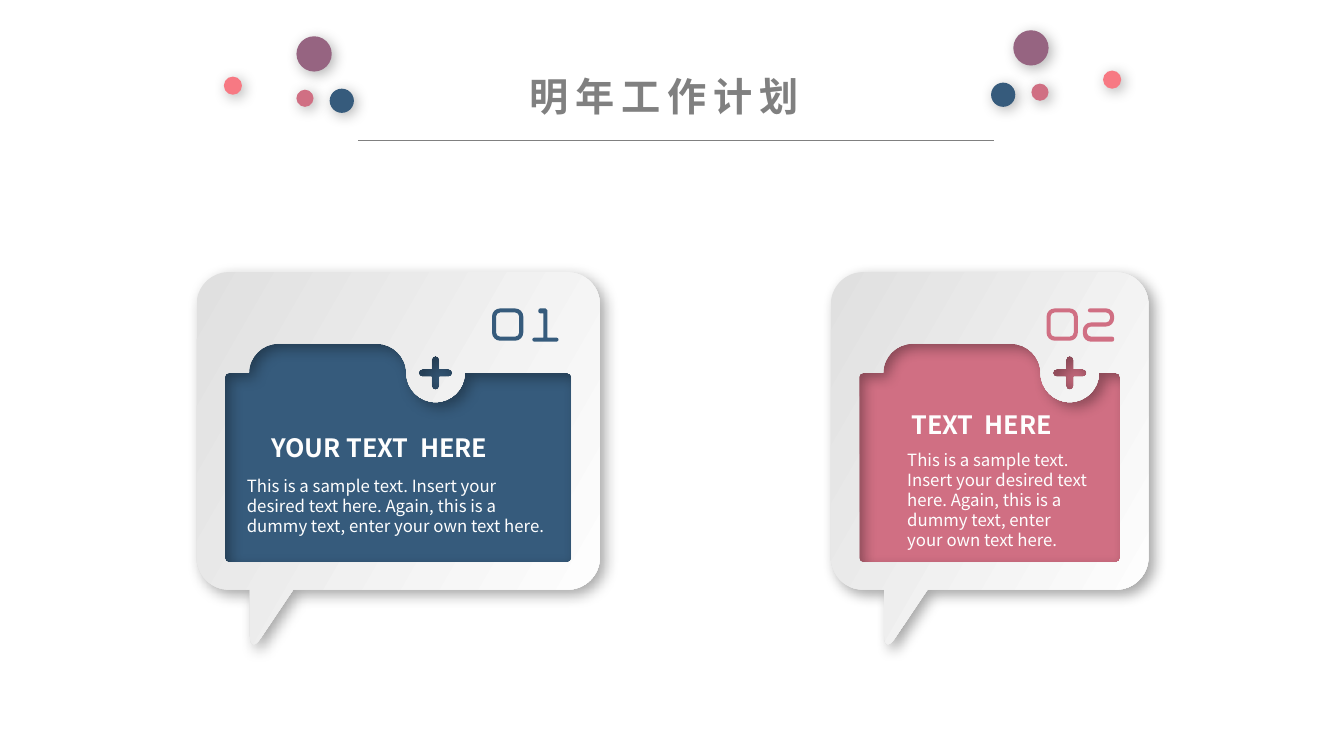
from lxml.etree import SubElement
from pptx import Presentation
from pptx.dml.color import RGBColor
from pptx.enum.shapes import MSO_CONNECTOR, MSO_SHAPE
from pptx.enum.text import MSO_ANCHOR, MSO_AUTO_SIZE, PP_ALIGN
from pptx.oxml.ns import qn
from pptx.util import Inches, Pt

# The slide is a grid of square cells, one inch a side.
CELL = Inches(1)
COLUMNS, ROWS = 13.33, 7.5
FONT = "Noto Sans CJK SC"
COLORS = {
    "blue": "365B7C", "rose": "D06F83", "plum": "966481", "coral": "F77983",
    "gray": "808080", "text": "FEFEFE", "card_dark": "E0E0E0",
    "card_light": "FFFFFF", "shadow": "000000",
}
SAMPLE = ("This is a sample text. Insert your desired text here. "
          "Again, this is a dummy text, enter your own text here.")

CARD_TOP, CARD_BOTTOM = 2.7, 5.85
WINDOW_TOP, WINDOW_BOTTOM = 3.7, 5.58
WINDOW_INSET = 0.28
TAB_RADIUS = 0.29
PLUS_OFFSET = 2.37
DIGIT_TOP = 3.06
CURVE = 0.55  # how far a control point lies from the curve's end to the corner

# Mirrored dots: left, top on the right-hand side, diameter, colour
DOTS = [
    (10.23, 0.83, 0.17, "rose"), (10.05, 0.3, 0.35, "plum"),
    (9.83, 0.82, 0.24, "blue"), (10.94, 0.7, 0.18, "coral"),
]
DOT_MIRROR, DOT_DROP = 13.34, 0.06

CARDS = [
    dict(left=1.95, width=4.0, color="blue", panel=(2.18, 3.62),
         digits=[("0", 4.88), ("1", 5.28)],
         heading=("YOUR TEXT  HERE", 2.59, 4.29, 2.81, 0.42),
         body=(SAMPLE, 2.35, 4.72, 3.27, 0.64)),
    dict(left=8.24, width=3.15, color="rose", panel=(8.35, 2.88),
         digits=[("0", 10.38), ("2", 10.74)],
         heading=("TEXT  HERE", 8.94, 4.06, 1.9, 0.42),
         body=(SAMPLE, 8.9, 4.46, 2.0, 1.32)),
]


def cells(*counts):
    return [round(count * CELL) for count in counts]


def rgb(name):
    return RGBColor.from_string(COLORS[name])


def box_corners(left, top, right, bottom, radius):
    return [(left, top, radius), (right, top, radius),
            (right, bottom, radius), (left, bottom, radius)]


def plus_corners(x, y, arm=0.17, half=0.04):
    signs = [(-1, -1), (1, -1), (1, 1), (-1, 1)]
    corners = []
    for index, (sx, sy) in enumerate(signs):
        tips = [(sx * arm, sy * half, half), (sx * half, sy * half, 0),
                (sx * half, sy * arm, half)]
        corners += tips if index % 2 == 0 else tips[::-1]
    return [(x + dx, y + dy, radius) for dx, dy, radius in corners]


DIGITS = {
    "0": [box_corners(0, 0, 0.31, 0.32, 0.08),
          box_corners(0.04, 0.04, 0.27, 0.28, 0.04)],
    "1": [[(0, 0.29, 0.02), (0.11, 0.29, 0), (0.11, 0.05, 0), (0.06, 0.05, 0.02),
           (0.06, 0, 0.02), (0.15, 0, 0.02), (0.15, 0.29, 0), (0.26, 0.29, 0.02),
           (0.26, 0.33, 0.02), (0, 0.33, 0.02)]],
    "2": [[(0.05, 0, 0.02), (0.31, 0, 0.08), (0.31, 0.18, 0.08), (0.04, 0.18, 0.04),
           (0.04, 0.28, 0.04), (0.31, 0.28, 0.02), (0.31, 0.33, 0.02),
           (0, 0.33, 0.08), (0, 0.14, 0.08), (0.27, 0.14, 0.04),
           (0.27, 0.04, 0.04), (0.05, 0.04, 0.02)]],
}


def corner_points(corners, index):
    """Return a sharp corner's point, or a round one's start, controls and end."""
    x, y, radius = corners[index]
    if not radius:
        return [(x, y)]
    ends, controls = [], []
    for near_x, near_y, _ in (corners[index - 1], corners[(index + 1) % len(corners)]):
        share = radius / ((near_x - x) ** 2 + (near_y - y) ** 2) ** 0.5
        dx, dy = (near_x - x) * share, (near_y - y) * share
        ends.append((x + dx, y + dy))
        controls.append((x + dx * (1 - CURVE), y + dy * (1 - CURVE)))
    return [ends[0], *controls, ends[1]]


def add_outline(shapes, contours):
    """Draw closed contours of (x, y, radius) corners as one freeform."""
    builder, curve_starts, line_count = None, [], 0
    for corners in contours:
        points = []
        for index in range(len(corners)):
            new_points = corner_points(corners, index)
            if len(new_points) > 1:
                curve_starts.append(line_count + len(points))
            points += [cells(*point) for point in new_points]
        if builder is None:
            builder = shapes.build_freeform(*points[0], scale=1.0)
        else:
            builder.move_to(*points[0])
        builder.add_line_segments(points[1:], close=True)
        line_count += len(points) - 1
    shape = builder.convert_to_shape()
    lines = list(shape._element.iter(qn("a:lnTo")))
    for start in curve_starts:
        first, *others = lines[start:start + 3]
        first.tag = qn("a:cubicBezTo")
        for line in others:
            first.append(line[0])
            line.getparent().remove(line)
    return shape


def paint(shape, color):
    shape.shadow.inherit = False
    shape.line.fill.background()
    shape.fill.solid()
    shape.fill.fore_color.rgb = rgb(color)


def add_shadow(shape, opacity, distance, blur=10, angle=45):
    effects = shape._element.spPr.find(qn("a:effectLst"))
    shadow = SubElement(effects, qn("a:outerShdw"), blurRad=str(Pt(blur)),
                        dist=str(Pt(distance)), dir=str(angle * 60000),
                        algn="tl", rotWithShape="0")
    color = SubElement(shadow, qn("a:srgbClr"), val=COLORS["shadow"])
    SubElement(color, qn("a:alpha"), val=str(opacity * 1000))


def write_text(shape, text, *, size, color, bold=False, spacing=None,
               wrap=True, margin_y=0):
    frame = shape.text_frame
    frame.word_wrap = wrap
    frame.auto_size = MSO_AUTO_SIZE.NONE if wrap else MSO_AUTO_SIZE.SHAPE_TO_FIT_TEXT
    frame.vertical_anchor = MSO_ANCHOR.TOP
    frame.margin_left = frame.margin_right = Inches(0.1)
    frame.margin_top = frame.margin_bottom = Inches(margin_y)
    paragraph = frame.paragraphs[0]
    paragraph.alignment = PP_ALIGN.LEFT
    run = paragraph.add_run()
    run.text = text
    run.font.name, run.font.size, run.font.bold = FONT, Pt(size), bold
    run.font.color.rgb = rgb(color)
    properties = run._r.get_or_add_rPr()
    if spacing:
        properties.set("spc", str(spacing * 100))
    latin = properties.find(qn("a:latin"))
    latin.addnext(latin.makeelement(qn("a:ea"), typeface=FONT))


def add_title(slide):
    title = slide.shapes.title
    title.left, title.top, title.width, title.height = cells(5.15, 0.67, 2.98, 0.57)
    write_text(title, "明年工作计划", size=28, color="gray", bold=True,
               spacing=5, wrap=False, margin_y=0.05)
    rule = slide.shapes.add_connector(MSO_CONNECTOR.STRAIGHT, *cells(3.55, 1.39, 9.86, 1.39))
    rule.line.color.rgb = rgb("gray")
    rule.line.width = Pt(0.5)
    SubElement(rule._element.spPr, qn("a:effectLst"))


def add_dot(slide, left, top, diameter, color):
    dot = slide.shapes.add_shape(MSO_SHAPE.OVAL, *cells(left, top, diameter, diameter))
    paint(dot, color)
    add_shadow(dot, opacity=30, distance=3)


def add_frame(shapes, left, right):
    """Draw the speech bubble with its folder window and plus cut out."""
    bubble = box_corners(left, CARD_TOP, right, CARD_BOTTOM, 0.32)
    bubble[3:3] = [(left + 0.96, CARD_BOTTOM, 0), (left + 0.53, 6.49, 0.18),
                   (left + 0.53, CARD_BOTTOM, 0)]
    window = box_corners(left + WINDOW_INSET, WINDOW_TOP,
                         right - WINDOW_INSET, WINDOW_BOTTOM, 0.04)
    plus_x, tab_left = left + PLUS_OFFSET, left + 0.52
    notch_left, notch_right = plus_x - TAB_RADIUS, plus_x + TAB_RADIUS
    tab_top, notch_bottom = WINDOW_TOP - TAB_RADIUS, WINDOW_TOP + TAB_RADIUS
    window[1:1] = [
        (tab_left, WINDOW_TOP, 0), (tab_left, tab_top, TAB_RADIUS),
        (notch_left, tab_top, TAB_RADIUS), (notch_left, notch_bottom, TAB_RADIUS),
        (notch_right, notch_bottom, TAB_RADIUS), (notch_right, WINDOW_TOP, 0),
    ]
    frame = add_outline(shapes, [bubble, plus_corners(plus_x, WINDOW_TOP), window])
    paint(frame, "card_light")
    frame.fill.gradient()
    frame.fill.gradient_angle = 330
    for stop, color in zip(frame.fill.gradient_stops, ("card_dark", "card_light")):
        stop.color.rgb = rgb(color)
    add_shadow(frame, opacity=35, distance=5)


def add_card(slide, left, width, color, panel, digits, heading, body):
    shapes = slide.shapes.add_group_shape().shapes
    panel_left, panel_width = panel
    paint(shapes.add_shape(MSO_SHAPE.RECTANGLE,
                           *cells(panel_left, 3.26, panel_width, 2.42)), color)
    add_frame(shapes, left, left + width)
    for digit, digit_left in digits:
        contours = [[(digit_left + x, DIGIT_TOP + y, radius) for x, y, radius in corners]
                    for corners in DIGITS[digit]]
        paint(add_outline(shapes, contours), color)
    for (text, *place), size, bold in ((body, 12, False), (heading, 18, True)):
        write_text(shapes.add_textbox(*cells(*place)), text, size=size,
                   color="text", bold=bold)


def main():
    presentation = Presentation()
    presentation.slide_width, presentation.slide_height = cells(COLUMNS, ROWS)
    slide = presentation.slides.add_slide(presentation.slide_layouts[5])
    for card in CARDS:
        add_card(slide, **card)
    add_title(slide)
    for left, top, diameter, color in DOTS:
        add_dot(slide, DOT_MIRROR - left - diameter, top + DOT_DROP, diameter, color)
        add_dot(slide, left, top, diameter, color)
    presentation.save("out.pptx")


if __name__ == "__main__":
    main()
